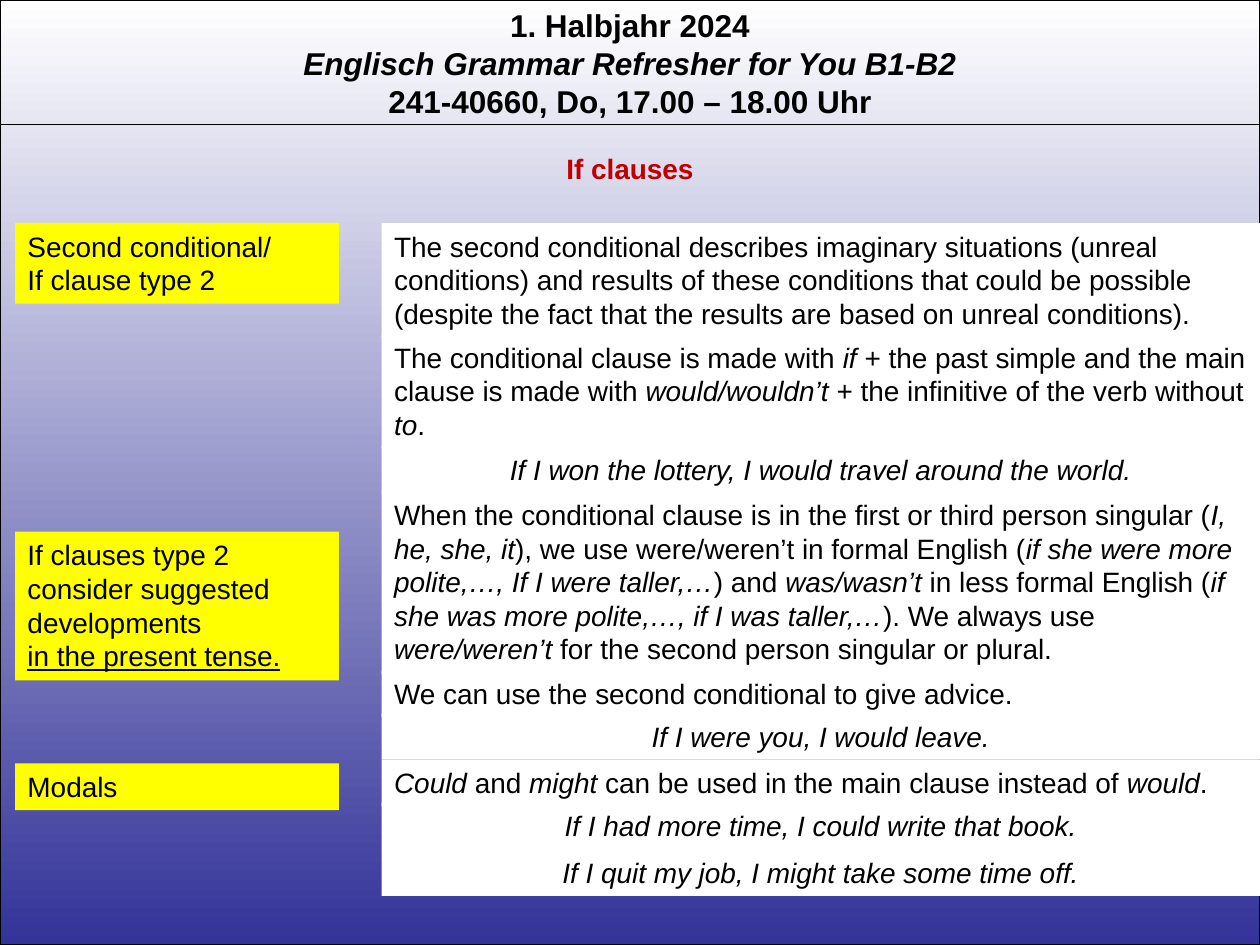
from lxml.etree import SubElement
from pptx import Presentation
from pptx.dml.color import RGBColor
from pptx.enum.shapes import MSO_CONNECTOR, MSO_SHAPE
from pptx.enum.text import MSO_ANCHOR, MSO_AUTO_SIZE, PP_ALIGN
from pptx.oxml.ns import qn
from pptx.util import Pt

SCALE = 9144  # EMU per px, 100 px to the inch
WIDE, HIGH = 1000, 750
COLORS = {"ink": "000000", "paper": "FFFFFF", "note": "FFFF00",
          "title": "C00000", "deep": "333399"}

NOTE_X, NOTE_W = 12, 257
RULE_X = 303
RULE_W = WIDE - RULE_X
ROW = 37

# top, height, text, centred; asterisks enclose italics
RULES = [
    (177, 91, "The second conditional describes imaginary situations (unreal "
     "conditions) and results of these conditions that could be possible "
     "(despite the fact that the results are based on unreal conditions).", False),
    (265, 91, "The conditional clause is made with *if* + the past simple and "
     "the main clause is made with *would/wouldn’t *+ the infinitive of the "
     "verb without *to*.", False),
    (532, ROW, "We can use the second conditional to give advice.", False),
    (603, ROW, "*Could* and *might* can be used in the main clause instead of "
     "*would*.", False),
    (566, ROW, "*If I were you, I would leave.*", True),
    (637, ROW, "*If I had more time, I could write that book.*", True),
    (354, ROW, "*If I won the lottery, I would travel around the world.*", True),
    (390, 145, "When the conditional clause is in the first or third person "
     "singular (*I, he, she, it*), we use were/weren’t in formal English (*if "
     "she were more polite,…, If I were taller,…*) and *was/wasn’t *in less "
     "formal English (*if she was more polite,…, if I was taller,…*). We always "
     "use *were/weren’t *for the second person singular or plural.", False),
    (674, ROW, "*If I quit my job, I might take some time off.*", True),
]


def px(n):
    return round(n * SCALE)


def rgb(name):
    return RGBColor.from_string(COLORS[name])


def write(frame, text, size=16, color="ink", bold=False, under=False, center=False):
    """Add one paragraph; asterisks in the text switch italics on and off."""
    para = frame.add_paragraph() if frame.text else frame.paragraphs[0]
    para.alignment = PP_ALIGN.CENTER if center else PP_ALIGN.LEFT
    for i, part in enumerate(text.split("*")):
        if part:
            run = para.add_run()
            run.text = part
            font = run.font
            font.name, font.size, font.bold = "Arial", Pt(size), bold
            font.italic, font.underline = i % 2 == 1, under
            font.color.rgb = rgb(color)


class Page:
    def __init__(self, deck):
        self.slide = deck.slides.add_slide(deck.slide_layouts[5])
        self.shapes = self.slide.shapes

    def setup(self, frame):
        frame.word_wrap = True
        frame.auto_size = MSO_AUTO_SIZE.SHAPE_TO_FIT_TEXT
        frame.vertical_anchor = MSO_ANCHOR.TOP
        return frame

    def rect(self, x, y, w, h):
        shape = self.shapes.add_shape(MSO_SHAPE.RECTANGLE, px(x), px(y), px(w), px(h))
        shape.shadow.inherit = False
        return shape

    def backdrop(self):
        shape = self.rect(0, 0, WIDE, HIGH)
        shape.fill.gradient()
        shape.fill.gradient_angle = 270
        for stop, name in zip(shape.fill.gradient_stops, ("paper", "deep")):
            stop.color.rgb = rgb(name)
        shape.line.color.rgb = rgb("ink")
        shape.line.width = Pt(0.75)

    def box(self, x, y, w, h, fill):
        shape = self.rect(x, y, w, h)
        shape.fill.solid()
        shape.fill.fore_color.rgb = rgb(fill)
        shape.line.fill.background()
        return self.setup(shape.text_frame)

    def label(self, x, y, w, h):
        return self.setup(self.shapes.add_textbox(px(x), px(y), px(w), px(h)).text_frame)

    def line(self, x1, y1, x2, y2):
        line = self.shapes.add_connector(
            MSO_CONNECTOR.STRAIGHT, px(x1), px(y1), px(x2), px(y2))
        line.line.color.rgb = rgb("ink")
        line.line.width = Pt(0.75)
        SubElement(line.element.spPr, qn("a:effectLst"))

    def title(self, x, y, w, h, text):
        """Place the title placeholder in front of what is drawn so far."""
        title = self.shapes.title
        title.left, title.top, title.width, title.height = map(px, (x, y, w, h))
        write(self.setup(title.text_frame), text, color="title", bold=True, center=True)
        title.element.getparent().append(title.element)


def main():
    deck = Presentation()
    deck.slide_width, deck.slide_height = px(WIDE), px(HIGH)
    page = Page(deck)

    page.backdrop()
    head = page.label(0, 0, WIDE, 101)
    for text in ("1. Halbjahr 2024", "*Englisch Grammar Refresher for You B1-B2*",
                 "241-40660, Do, 17.00 – 18.00 Uhr"):
        write(head, text, size=18, bold=True, center=True)
    page.line(0, 99, WIDE, 99)
    page.title(0, 115, WIDE, ROW, "If clauses")

    kind = page.box(NOTE_X, 177, NOTE_W, 64, "note")
    write(kind, "Second conditional/")
    write(kind, "If clause type 2")
    tense = page.box(NOTE_X, 422, NOTE_W, 118, "note")
    write(tense, "If clauses type 2 consider suggested developments")
    write(tense, "in the present tense.", under=True)
    write(page.box(NOTE_X, 606, NOTE_W, ROW, "note"), "Modals")

    for y, h, text, center in RULES:
        write(page.box(RULE_X, y, RULE_W, h, "paper"), text, center=center)

    deck.save("out.pptx")


if __name__ == "__main__":
    main()
